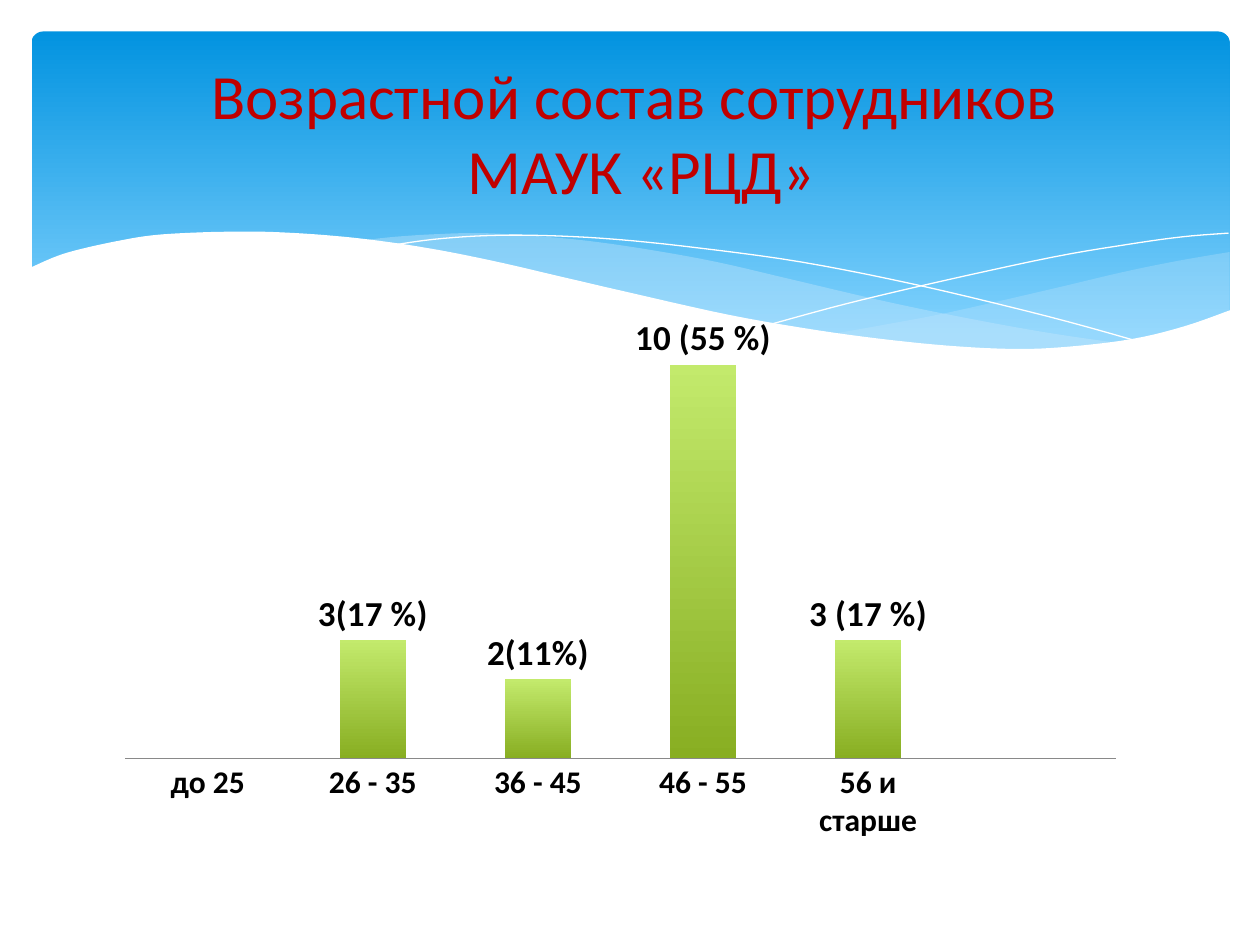
from lxml.etree import SubElement
from pptx import Presentation
from pptx.chart.data import CategoryChartData
from pptx.dml.color import RGBColor
from pptx.enum.chart import XL_CHART_TYPE, XL_LABEL_POSITION, XL_TICK_MARK
from pptx.enum.shapes import MSO_SHAPE
from pptx.enum.text import MSO_ANCHOR, PP_ALIGN
from pptx.oxml import parse_xml
from pptx.oxml.ns import nsdecls, qn
from pptx.util import Inches, Pt

FONT = "Calibri"
AGES = ["до 25", "26 - 35", "36 - 45", "46 - 55", "56 и старше", ""]
STAFF = [None, 3, 2, 10, 3, None]
NOTES = {1: "3(17 %)", 2: "2(11%)", 3: "10 (55 %)", 4: "3 (17 %)"}

RIGHT = [(9.76, 2), (9.35, 2.07), (8.91, 2.16), (8.32, 2.3), (7.53, 2.48),
         (7.06, 2.57), (6.61, 2.65)]
RIGHT_LOW = [(6.61, 2.65), (7.05, 2.71), (7.57, 2.76), (8.03, 2.78),
             (8.54, 2.76), (8.97, 2.7), (9.35, 2.62), (9.76, 2.47)]
MID = [(8.93, 2.73), (8.37, 2.65), (7.75, 2.54), (7.06, 2.4), (6.29, 2.22),
       (5.69, 2.08), (5.14, 1.98), (4.65, 1.91), (4.2, 1.87), (3.8, 1.85),
       (3.44, 1.86), (3.13, 1.88), (2.86, 1.91)]
MID_LOW = [(2.86, 1.91), (3.42, 1.99), (4.04, 2.11), (4.49, 2.22), (5.3, 2.4),
           (6.01, 2.55), (6.65, 2.66), (7.22, 2.74), (7.73, 2.77),
           (8.18, 2.78), (8.57, 2.77), (8.93, 2.73)]
FALL = [(3.09, 1.95), (3.44, 1.9), (3.87, 1.87), (4.33, 1.87), (4.89, 1.9),
        (5.56, 1.97), (6.36, 2.08), (7.27, 2.26), (8.31, 2.51), (9.07, 2.72)]
RISE = [(6.13, 2.57), (6.72, 2.41), (7.48, 2.23), (8.36, 2.04), (8.95, 1.94),
        (9.38, 1.88), (9.75, 1.85)]
EDGE = [(9.77, 2.46), (9.4, 2.59), (8.99, 2.69), (8.5, 2.75), (8.09, 2.77),
        (7.61, 2.75), (7.08, 2.7), (6.48, 2.62), (5.79, 2.5), (5.03, 2.33),
        (4.47, 2.2), (3.91, 2.07), (3.4, 1.97), (2.92, 1.9), (2.5, 1.86),
        (2.11, 1.84), (1.77, 1.84), (1.46, 1.85), (1.19, 1.87), (0.95, 1.91),
        (0.67, 1.97), (0.46, 2.03), (0.23, 2.13)]


def color(hexa):
    """Turn a hex string into a colour."""
    return RGBColor.from_string(hexa)


def blend(fill, top, low, end=1.0):
    """Fill from one colour at the top to another below."""
    fill.gradient()
    fill.gradient_angle = 270
    for stop, hexa, place in zip(fill.gradient_stops, (top, low), (0, end)):
        stop.color.rgb = color(hexa)
        stop.position = place


def curve(knots, steps=5):
    """Sample a smooth curve that passes through the knots."""
    ends = [knots[0], *knots, knots[-1]]
    dots = []
    for a, b, c, d in zip(ends, ends[1:], ends[2:], ends[3:]):
        for t in (i / steps for i in range(steps)):
            dots.append(tuple(
                q + t * (r - p + t * (2 * p - 5 * q + 4 * r - s
                                      + t * (3 * q - p - 3 * r + s))) / 2
                for p, q, r, s in zip(a, b, c, d)))
    return dots + [knots[-1]]


def trace(slide, dots, closed):
    """Draw a freeform through the dots, given in inches."""
    first, *rest = [(Inches(x), Inches(y)) for x, y in dots]
    pen = slide.shapes.build_freeform(*first)
    pen.add_line_segments(rest, close=closed)
    shape = pen.convert_to_shape()
    shape.shadow.inherit = False
    return shape


def wave(slide, dots, hexa, alpha=100):
    """Add a filled wave with the given opacity in percent."""
    shape = trace(slide, dots, True)
    shape.fill.solid()
    shape.fill.fore_color.rgb = color(hexa)
    shape.line.fill.background()
    if alpha < 100:
        tint = shape.element.spPr.find(qn("a:solidFill"))[0]
        SubElement(tint, qn("a:alpha"), val=str(alpha * 1000))


def thread(slide, knots):
    """Add a thin white curve."""
    shape = trace(slide, curve(knots), False)
    shape.fill.background()
    shape.line.color.rgb = color("FFFFFF")
    shape.line.width = Pt(0)


def banner(slide):
    """Add the blue panel with its waves."""
    panel = slide.shapes.add_shape(
        MSO_SHAPE.ROUNDED_RECTANGLE,
        Inches(0.25), Inches(0.25), Inches(9.51), Inches(2.7))
    panel.adjustments[0] = 0.034
    panel.shadow.inherit = False
    panel.line.fill.background()
    blend(panel.fill, "0293E0", "83D3FE", 0.9)
    wave(slide, curve(RIGHT) + curve(RIGHT_LOW), "C6E7FC", 29)
    wave(slide, curve(MID) + curve(MID_LOW), "C6E7FC", 40)
    thread(slide, FALL)
    thread(slide, RISE)
    wave(slide, curve(EDGE) + [(0.23, 3.29), (9.77, 3.29)], "FFFFFF")


def style(font, size, hexa, bold=False):
    """Set the look of a font."""
    font.name, font.size, font.bold = FONT, Pt(size), bold
    font.color.rgb = color(hexa)


def title(slide, lines):
    """Add the centred title, one run per line."""
    box = slide.shapes.add_textbox(
        Inches(0.59), Inches(0.36), Inches(9), Inches(1.37))
    frame = box.text_frame
    frame.word_wrap = True
    frame.vertical_anchor = MSO_ANCHOR.MIDDLE
    para = frame.paragraphs[0]
    para.alignment = PP_ALIGN.CENTER
    for i, line in enumerate(lines):
        if i:
            para.add_line_break()
        run = para.add_run()
        run.text = line
        style(run.font, 36, "C00000")


def layout(chart, x, y, w, h):
    """Fix the inner plot area as shares of the chart."""
    area = chart.plots[0]._element.getparent()
    for old in area.findall(qn("c:layout")):
        area.remove(old)
    parts = "".join(f'<c:{k} val="{v}"/>' for k, v in (
        ("layoutTarget", "inner"), ("xMode", "edge"), ("yMode", "edge"),
        ("x", x), ("y", y), ("w", w), ("h", h)))
    area.insert(0, parse_xml(
        f'<c:layout {nsdecls("c")}><c:manualLayout>{parts}'
        '</c:manualLayout></c:layout>'))


def bars(slide):
    """Add the column chart of ages."""
    data = CategoryChartData()
    data.categories = AGES
    data.add_series("Series 1", STAFF)
    chart = slide.shapes.add_chart(
        XL_CHART_TYPE.COLUMN_CLUSTERED, Inches(0.83), Inches(2.18),
        Inches(8.19), Inches(4.57), data).chart
    chart.has_legend = chart.has_title = False
    style(chart.font, 18, "000000")
    layout(chart, 0.02, 0.02, 0.96, 0.82)
    axis = chart.category_axis
    axis.major_tick_mark = XL_TICK_MARK.NONE
    axis.format.line.color.rgb = color("898989")
    style(axis.tick_labels.font, 18, "000000", True)
    scale = chart.value_axis
    scale.minimum_scale, scale.maximum_scale = 0, 12
    scale.has_major_gridlines = scale.visible = False
    plot = chart.plots[0]
    plot.gap_width, plot.overlap = 150, -25
    plot.vary_by_categories = False
    row = plot.series[0]
    row.invert_if_negative = False
    blend(row.format.fill, "C3EA6C", "88AE22")
    labels = row.data_labels
    labels.show_value = True
    labels.position = XL_LABEL_POSITION.OUTSIDE_END
    style(labels.font, 20, "000000", True)
    for i, note in NOTES.items():
        label = row.points[i].data_label
        run = label.text_frame.paragraphs[0].add_run()
        run.text = note
        style(run.font, 20, "000000", True)
        label.position = XL_LABEL_POSITION.OUTSIDE_END


def main():
    """Build and save the slide."""
    deck = Presentation()
    deck.slide_width, deck.slide_height = Inches(10), Inches(7.5)
    slide = deck.slides.add_slide(deck.slide_layouts[6])
    banner(slide)
    bars(slide)
    title(slide, ["Возрастной состав сотрудников ", "МАУК «РЦД»"])
    deck.save("out.pptx")


if __name__ == "__main__":
    main()
